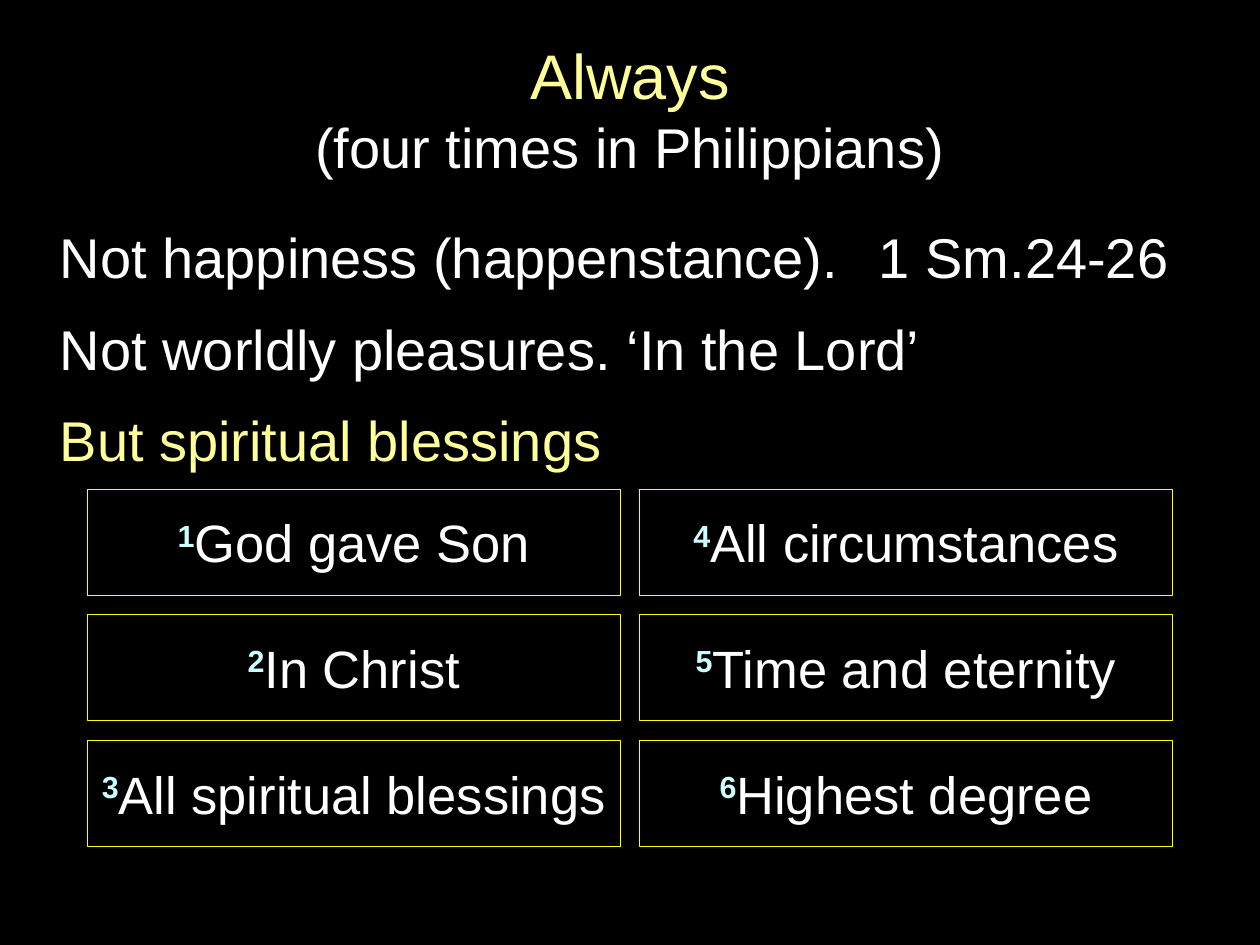
from copy import deepcopy

from lxml.etree import SubElement
from pptx import Presentation
from pptx.dml.color import RGBColor
from pptx.enum.shapes import MSO_SHAPE as Shape
from pptx.enum.text import MSO_ANCHOR as Anchor, MSO_AUTO_SIZE as AutoSize, PP_ALIGN as Align
from pptx.oxml.ns import qn
from pptx.util import Pt

BLACK, WHITE = "000000", "FFFFFF"
YELLOW, PALE_YELLOW, PALE_CYAN = "FFFF00", "FFFF99", "CCFFFF"

FRAME = {"word_wrap": True, "auto_size": AutoSize.NONE}
POINT = {"alignment": Align.LEFT, "space_after": Pt(6)}

# Text, colour and tab stop in points
POINTS = [
    ("Not happiness (happenstance).\t1 Sm.24-26", WHITE, 462.5),
    ("Not worldly pleasures.\t‘In the Lord’", WHITE, 341.5),
    ("But spiritual blessings", PALE_YELLOW, None),
]
BLESSINGS = [
    "God gave Son", "In Christ", "All spiritual blessings",
    "All circumstances", "Time and eternity", "Highest degree",
]
ROWS = 3
GRID_LEFT, GRID_TOP = 50, 279.5
COLUMN_STEP, ROW_STEP = 315.5, 71.8
BOX_WIDTH, BOX_HEIGHT = 304.5, 60.5


def rgb(value):
    return RGBColor.from_string(value)


def apply(target, values):
    for name, value in values.items():
        setattr(target, name, value)


def place(shape, left, top, width, height):
    apply(shape, {"left": Pt(left), "top": Pt(top), "width": Pt(width), "height": Pt(height)})


def add_run(paragraph, text, size, color, bold=False):
    run = paragraph.add_run()
    run.text = text
    apply(run.font, {"name": "Arial", "size": Pt(size), "bold": bold})
    run.font.color.rgb = rgb(color)
    return run


def fill_title(title):
    place(title, 27, 10.8, 666, 102.2)
    apply(title.text_frame, {**FRAME, "vertical_anchor": Anchor.MIDDLE})
    heading = title.text_frame.paragraphs[0]
    heading.alignment = Align.CENTER
    word = add_run(heading, "Always", 36, PALE_YELLOW)
    heading.add_line_break()
    line_break = heading._p.find(qn("a:br"))
    line_break.append(deepcopy(word._r.rPr))
    add_run(heading, "(four times in Philippians)", 32, WHITE)


def remove_bullet(paragraph, tab_stop):
    """Drop the bullet and indent, and set a tab stop if there is one."""
    properties = paragraph._p.get_or_add_pPr()
    properties.set("marL", "0")
    properties.set("indent", "0")
    SubElement(properties, qn("a:buNone"))
    if tab_stop:
        tabs = SubElement(properties, qn("a:tabLst"))
        SubElement(tabs, qn("a:tab"), pos=str(Pt(tab_stop)), algn="l")


def fill_points(body):
    place(body, 27, 121, 666, 395.3)
    frame = body.text_frame
    apply(frame, {**FRAME, "vertical_anchor": Anchor.TOP, "margin_top": Pt(6)})
    for index, (text, color, tab_stop) in enumerate(POINTS):
        point = frame.add_paragraph() if index else frame.paragraphs[0]
        remove_bullet(point, tab_stop)
        apply(point, {**POINT, "space_before": Pt(8 if index else 0)})
        add_run(point, text, 32, color)


def add_blessing(slide, index, text):
    column, row = divmod(index, ROWS)
    box = slide.shapes.add_shape(
        Shape.RECTANGLE,
        Pt(GRID_LEFT + column * COLUMN_STEP), Pt(GRID_TOP + row * ROW_STEP),
        Pt(BOX_WIDTH), Pt(BOX_HEIGHT))
    box.shadow.inherit = False
    box.fill.solid()
    box.fill.fore_color.rgb = rgb(BLACK)
    box.line.color.rgb = rgb(YELLOW)
    box.line.width = Pt(0.25)
    apply(box.text_frame, {"word_wrap": False, "vertical_anchor": Anchor.MIDDLE})
    label = box.text_frame.paragraphs[0]
    label.alignment = Align.CENTER
    number = add_run(label, str(index + 1), 30, PALE_CYAN, bold=True)
    number._r.get_or_add_rPr().set("baseline", "30000")
    add_run(label, text, 30, WHITE)


def main():
    deck = Presentation()
    apply(deck, {"slide_width": Pt(720), "slide_height": Pt(540)})
    slide = deck.slides.add_slide(deck.slide_layouts[1])
    slide.background.fill.solid()
    slide.background.fill.fore_color.rgb = rgb(BLACK)
    fill_title(slide.shapes.title)
    fill_points(slide.placeholders[1])
    for index, text in enumerate(BLESSINGS):
        add_blessing(slide, index, text)
    deck.save("out.pptx")


if __name__ == "__main__":
    main()
